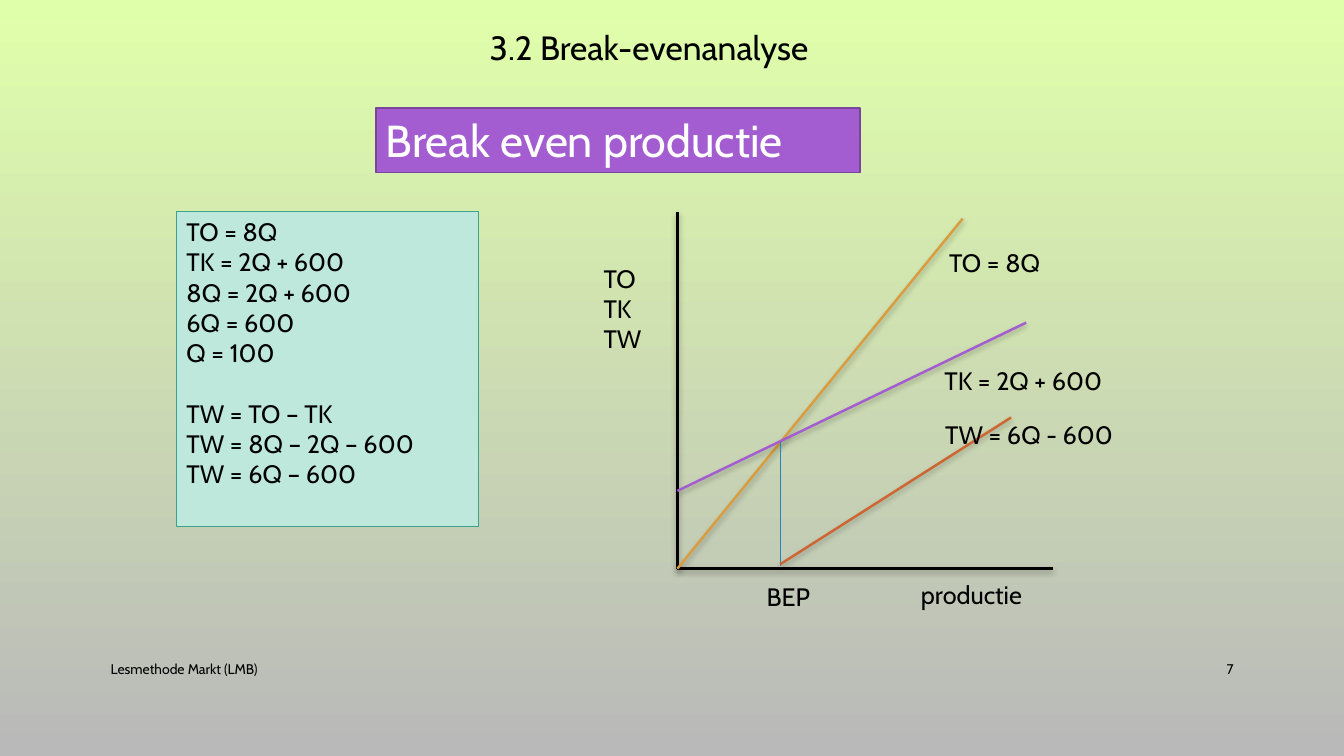
import pptx
import pptx.dml.color
import pptx.enum.shapes
import pptx.enum.text
import pptx.oxml
import pptx.util
from pptx.util import Cm

ALIGN = pptx.enum.text.PP_ALIGN
ANCHOR = pptx.enum.text.MSO_ANCHOR
DRAWING_NS = 'xmlns:a="http://schemas.openxmlformats.org/drawingml/2006/main"'
NO_EFFECT = f"<a:effectLst {DRAWING_NS}/>"
SOFT_SHADOW = f"""<a:effectLst {DRAWING_NS}>
  <a:outerShdw blurRad="50800" dist="25400" dir="5400000" rotWithShape="0">
    <a:srgbClr val="000000"><a:alpha val="28000"/></a:srgbClr>
  </a:outerShdw>
</a:effectLst>"""


def rgb(value):
    return pptx.dml.color.RGBColor.from_string(value)


def write(shape, lines, size, color="000000", align=ALIGN.LEFT, anchor=ANCHOR.TOP):
    """Fill a shape with one paragraph per line."""
    frame = shape.text_frame
    frame.word_wrap = True
    frame.vertical_anchor = anchor
    for index, line in enumerate(lines):
        paragraph = frame.add_paragraph() if index else frame.paragraphs[0]
        paragraph.alignment = align
        run = paragraph.add_run()
        run.text = line
        run.font.name = "Cabin"
        run.font.size = pptx.util.Pt(size)
        run.font.color.rgb = rgb(color)


deck = pptx.Presentation()
deck.slide_width, deck.slide_height = Cm(33.87), Cm(19.05)
slide = deck.slides.add_slide(deck.slide_layouts[6])

backdrop = slide.background.fill
backdrop.gradient()
backdrop.gradient_angle = 270
for stop, color in zip(backdrop.gradient_stops, ("E0FFAB", "B9B9B9")):
    stop.color.rgb = rgb(color)

# Footer
footer_top, footer_height = Cm(16.34), Cm(1.02)
for left, width, text, align in (
    (2.54, 18.54, "Lesmethode Markt (LMB)", ALIGN.LEFT),
    (29.21, 2.13, "7", ALIGN.RIGHT),
):
    footer = slide.shapes.add_textbox(Cm(left), footer_top, Cm(width), footer_height)
    write(footer, [text], 10, align=align, anchor=ANCHOR.MIDDLE)

# Break-even graph
origin_x, origin_y = 17.07, 14.33
bep_x, bep_y = 19.66, 11.13
graph_lines = (
    (origin_x, 5.33, origin_x, origin_y, "000000", 1.75, SOFT_SHADOW),
    (origin_x, origin_y, 26.54, origin_y, "000000", 1.75, SOFT_SHADOW),
    (origin_x, origin_y, 24.26, 5.51, "D99C3F", 1.75, SOFT_SHADOW),
    (origin_x, 12.37, 25.86, 8.13, "A35DD1", 1.75, SOFT_SHADOW),
    (bep_x, bep_y, bep_x, 14.27, "2683BF", 0.75, NO_EFFECT),
    (bep_x, 14.22, 25.48, 10.52, "CE6633", 1.75, SOFT_SHADOW),
)
for x1, y1, x2, y2, color, weight, effect in graph_lines:
    graph_line = slide.shapes.add_connector(
        pptx.enum.shapes.MSO_CONNECTOR.STRAIGHT, Cm(x1), Cm(y1), Cm(x2), Cm(y2))
    graph_line.line.color.rgb = rgb(color)
    graph_line.line.width = pptx.util.Pt(weight)
    graph_line._element.spPr.append(pptx.oxml.parse_xml(effect))

# Title and graph labels
labels = (
    (12.09, 0.56, 9.55, 1.27, ["3.2 Break-evenanalyse"], 24),
    (23.67, 6.12, 3.1, 1.02, ["TO = 8Q"], 18),
    (23.55, 9.07, 4.95, 1.02, ["TK = 2Q + 600"], 18),
    (23.57, 10.44, 5, 1.02, ["TW = 6Q - 600"], 18),
    (19.07, 14.53, 1.8, 1.02, ["BEP"], 18),
    (22.96, 14.48, 3.5, 1.02, ["productie"], 18),
    (14.96, 6.5, 2, 2.57, ["TO", "TK", "TW"], 18),
)
for left, top, width, height, lines, size in labels:
    label = slide.shapes.add_textbox(Cm(left), Cm(top), Cm(width), Cm(height))
    write(label, lines, size)

# Heading and calculation panels
calculation = [
    "TO = 8Q", "TK = 2Q + 600", "8Q = 2Q + 600", "6Q = 600", "Q = 100",
    "TW = TO – TK", "TW = 8Q – 2Q – 600", "TW = 6Q – 600",
]
panels = (
    (4.45, 5.33, 7.6, 7.95, "BDE8DB", "3CA28B", 0.75, calculation, 18, "000000"),
    (9.47, 2.72, 12.2, 1.63, "A35DD1", "79459B", 1.25, ["Break even productie"], 32, "FFFFFF"),
)
for left, top, width, height, fill, border, weight, lines, size, color in panels:
    panel = slide.shapes.add_shape(
        pptx.enum.shapes.MSO_SHAPE.RECTANGLE, Cm(left), Cm(top), Cm(width), Cm(height))
    panel.shadow.inherit = False
    panel.fill.solid()
    panel.fill.fore_color.rgb = rgb(fill)
    panel.line.color.rgb = rgb(border)
    panel.line.width = pptx.util.Pt(weight)
    write(panel, lines, size, color)
    for paragraph in panel.text_frame.paragraphs:
        if paragraph.text == "TW = TO – TK":
            paragraph.space_before = pptx.util.Pt(21.6)

deck.save("out.pptx")
